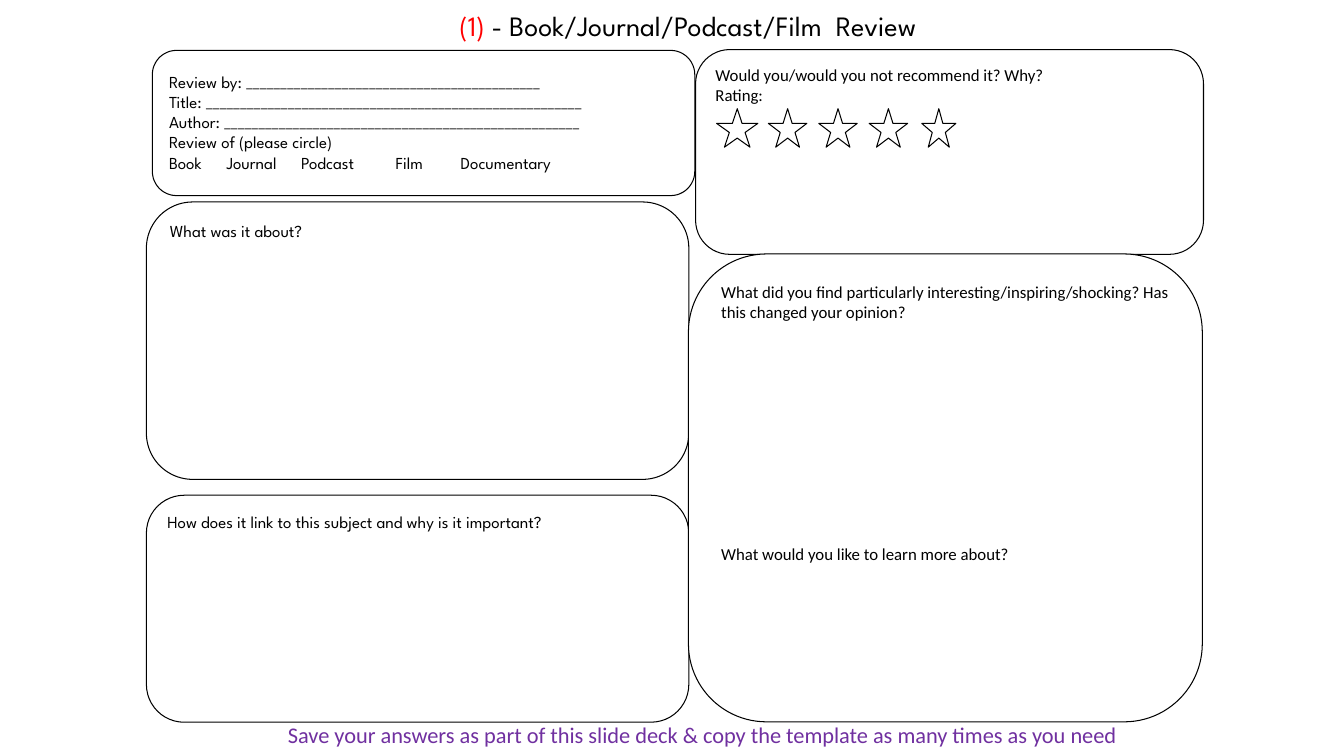
from lxml.etree import SubElement
from pptx import Presentation
from pptx.dml.color import RGBColor
from pptx.enum.shapes import MSO_SHAPE
from pptx.enum.text import MSO_ANCHOR, PP_ALIGN
from pptx.oxml.ns import qn
from pptx.util import Cm, Pt

THEME = {
    "ink": RGBColor(0, 0, 0), "paper": RGBColor(255, 255, 255),
    "red": RGBColor(255, 0, 0), "purple": RGBColor(0x70, 0x30, 0xA0),
    "sans": "Calibri", "round": "League Spartan",
    "title": Pt(20), "body": Pt(12), "foot": Pt(16), "line": Pt(0.75),
}

# Boxes are left, top, width, height in cm
TITLE_BOX = (9.53, 0.1, 15.62, 1.02)
TITLE = [("(1)", "red"), (" - Book/Journal/Podcast/Film  Review", "ink")]

PANELS = [
    ((17.53, 1.25, 12.8, 5.16), "sans",
     ["Would you/would you not recommend it? Why?", "Rating:"]),
    ((3.69, 12.48, 13.67, 5.72), "round",
     ["How does it link to this subject and why is it important?"]),
    ((3.69, 5.09, 13.67, 6.99), "round", ["What was it about?"]),
    ((17.35, 6.4, 12.95, 11.79), "sans",
     ["What did you find particularly interesting/inspiring/shocking? "
      "Has this changed your opinion?",
      "What would you like to learn more about?"]),
]
LEARN_GAP = Pt(158)

FORM_BOX = (4.01, 1.68, 13.34, 2.62)
FRAME_BOX = (3.84, 1.27, 13.67, 3.66)
BLANKS = [("Review by: ", 43), ("Title: ", 55), ("Author: ", 52)]
PROMPT = "Review of (please circle)"
KINDS = ["Book", "Journal", "Podcast", "Film", "Documentary"]
KIND_TABS = [1.45, 3.33, 5.71, 7.35]

STAR_WIDTHS = [1.04, 0.97, 0.97, 0.97, 0.86]
STAR_MID, STAR_STEP, STAR_TOP, STAR_HIGH = 18.58, 1.27, 2.74, 0.97

FOOT_BOX = (3.95, 18.04, 27.51, 0.94)
FOOT = ("Save your answers as part of this slide deck "
        "& copy the template as many times as you need")


def place(box):
    return [Cm(n) for n in box]


def add_box(slide, kind, box, fill=True, line=True):
    shape = slide.shapes.add_shape(kind, *place(box))
    shape.shadow.inherit = False
    if fill:
        shape.fill.solid()
        shape.fill.fore_color.rgb = THEME["paper"]
    else:
        shape.fill.background()
    if line:
        shape.line.color.rgb = THEME["ink"]
        shape.line.width = THEME["line"]
    else:
        shape.line.fill.background()
    return shape


def style(para, face, size, color=None, align=PP_ALIGN.LEFT):
    para.alignment = align
    para.font.name = THEME[face]
    para.font.size = THEME[size]
    if color:
        para.font.color.rgb = THEME[color]


def add_tabs(para, stops):
    tabs = SubElement(para._p.get_or_add_pPr(), qn("a:tabLst"))
    for stop in stops:
        SubElement(tabs, qn("a:tab"), pos=str(Cm(stop)), algn="l")


def write(shape, lines, face):
    """Fill the shape with left-aligned body lines and return the paragraphs."""
    frame = shape.text_frame
    frame.word_wrap = True
    frame.vertical_anchor = MSO_ANCHOR.TOP
    frame.text = "\n".join(lines)
    for para in frame.paragraphs:
        if "\t" in para.text:
            add_tabs(para, KIND_TABS)
        style(para, face, "body", "ink")
    return frame.paragraphs


def add_title(slide):
    shape = add_box(slide, MSO_SHAPE.RECTANGLE, TITLE_BOX, line=False)
    frame = shape.text_frame
    frame.word_wrap = True
    frame.vertical_anchor = MSO_ANCHOR.TOP
    para = frame.paragraphs[0]
    style(para, "round", "title", align=PP_ALIGN.CENTER)
    for text, color in TITLE:
        run = para.add_run()
        run.text = text
        run.font.color.rgb = THEME[color]


def add_form(slide):
    shape = add_box(slide, MSO_SHAPE.RECTANGLE, FORM_BOX, line=False)
    lines = [label + "_" * count for label, count in BLANKS]
    write(shape, lines + [PROMPT, "\t".join(KINDS)], "round")
    add_box(slide, MSO_SHAPE.FLOWCHART_ALTERNATE_PROCESS, FRAME_BOX, fill=False)


def add_stars(slide):
    for i, width in enumerate(STAR_WIDTHS):
        left = STAR_MID + i * STAR_STEP - width / 2
        add_box(slide, MSO_SHAPE.STAR_5_POINT,
                (left, STAR_TOP, width, STAR_HIGH))


def add_foot(slide):
    frame = slide.shapes.add_textbox(*place(FOOT_BOX)).text_frame
    frame.word_wrap = True
    frame.text = FOOT
    style(frame.paragraphs[0], "sans", "foot", "purple", PP_ALIGN.CENTER)


def main():
    deck = Presentation()
    deck.slide_width, deck.slide_height = Cm(33.87), Cm(19.05)
    slide = deck.slides.add_slide(deck.slide_layouts[6])
    for box, face, lines in PANELS:
        shape = add_box(slide, MSO_SHAPE.FLOWCHART_ALTERNATE_PROCESS, box)
        paras = write(shape, lines, face)
    paras[-1].space_before = LEARN_GAP
    add_title(slide)
    add_form(slide)
    add_stars(slide)
    add_foot(slide)
    deck.save("out.pptx")


if __name__ == "__main__":
    main()
